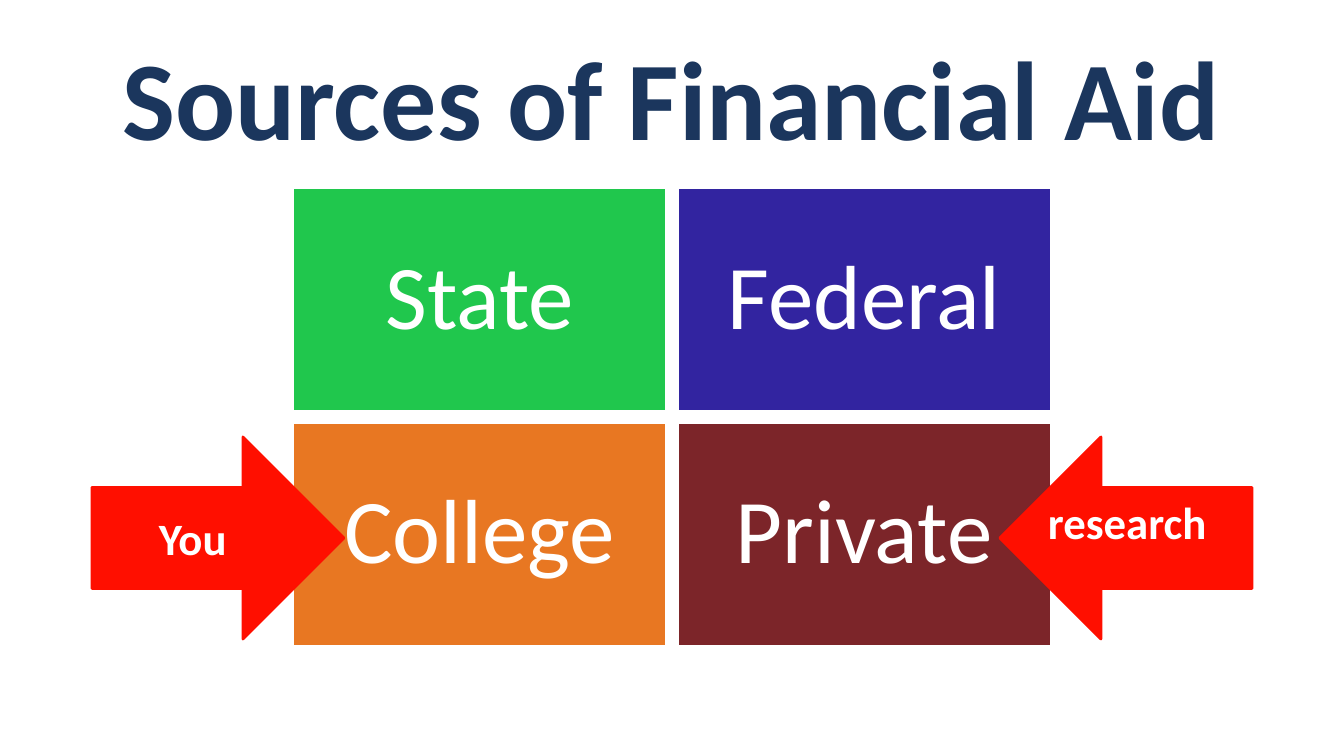
from pptx import Presentation
from pptx import util as u
from pptx.dml.color import RGBColor
from pptx.enum import shapes, text

PX = 914400 / 100.8
FONT = "Calibri"
COLOURS = {
    "navy": "1B365D", "white": "FFFFFF", "red": "FF0F00",
    "State": "20C74D", "Federal": "3224A0",
    "College": "E87722", "Private": "7C2529",
}


def px(length):
    """Turn whole px into EMU."""
    return u.Emu(round(length * PX))


def colour(name):
    """Look up a named colour."""
    return RGBColor.from_string(COLOURS[name])


def write(frame, words, size, ink, bold=False, insets=(10, 5, 10, 5)):
    """Write one centred line into a text frame."""
    frame.word_wrap = True
    frame.auto_size = text.MSO_AUTO_SIZE.NONE
    frame.vertical_anchor = text.MSO_ANCHOR.MIDDLE
    (frame.margin_left, frame.margin_top,
     frame.margin_right, frame.margin_bottom) = map(px, insets)
    line = frame.paragraphs[0]
    line.alignment = text.PP_ALIGN.CENTER
    run = line.add_run()
    run.text = words
    run.font.name = FONT
    run.font.size = u.Pt(size)
    run.font.bold = bold
    run.font.color.rgb = colour(ink)
    return line


def add_block(slide, preset, box, fill, outline):
    """Add a filled and outlined preset shape in a px box."""
    block = slide.shapes.add_shape(preset, *map(px, box))
    block.shadow.inherit = False
    block.fill.solid()
    block.fill.fore_color.rgb = colour(fill)
    block.line.color.rgb = colour(outline)
    block.line.width = u.Pt(2)
    return block


def add_heading(slide, box, words):
    """Place and format the title placeholder."""
    heading = slide.shapes.title
    heading.left, heading.top, heading.width, heading.height = map(px, box)
    write(heading.text_frame, words, 80, "navy", bold=True)


def add_sources(slide, box, names, columns=2, gap=11):
    """Fill a box with an even grid of named source tiles."""
    left, top, width, height = box
    rows = len(names) // columns
    tile_w = (width - gap * (columns - 1)) / columns
    tile_h = (height - gap * (rows - 1)) / rows
    for i, name in enumerate(names):
        row, column = divmod(i, columns)
        place = (left + column * (tile_w + gap), top + row * (tile_h + gap), tile_w, tile_h)
        tile = add_block(slide, shapes.MSO_SHAPE.RECTANGLE, place, name, "white")
        line = write(tile.text_frame, name, 65, "white", insets=(27, 27, 27, 27))
        line.line_spacing = 0.9


def add_pointer(slide, preset, box, words, insets):
    """Add a red arrow that carries a bold label."""
    pointer = add_block(slide, preset, box, "red", "red")
    write(pointer.text_frame, words, 32, "white", bold=True, insets=insets)


def main():
    """Build and save the slide."""
    deck = Presentation()
    deck.slide_width, deck.slide_height = px(1344), px(756)
    slide = deck.slides.add_slide(deck.slide_layouts[5])
    add_heading(slide, (67, 33, 1210, 126), "Sources of Financial Aid")
    add_sources(slide, (293, 188, 758, 458), ("State", "Federal", "College", "Private"))
    add_pointer(slide, shapes.MSO_SHAPE.RIGHT_ARROW, (92, 437, 252, 202), "You", (10, 5, 10, 5))
    add_pointer(slide, shapes.MSO_SHAPE.LEFT_ARROW, (1000, 437, 252, 202), "research", (-10, 5, 38, 37))
    deck.save("out.pptx")


if __name__ == "__main__":
    main()
